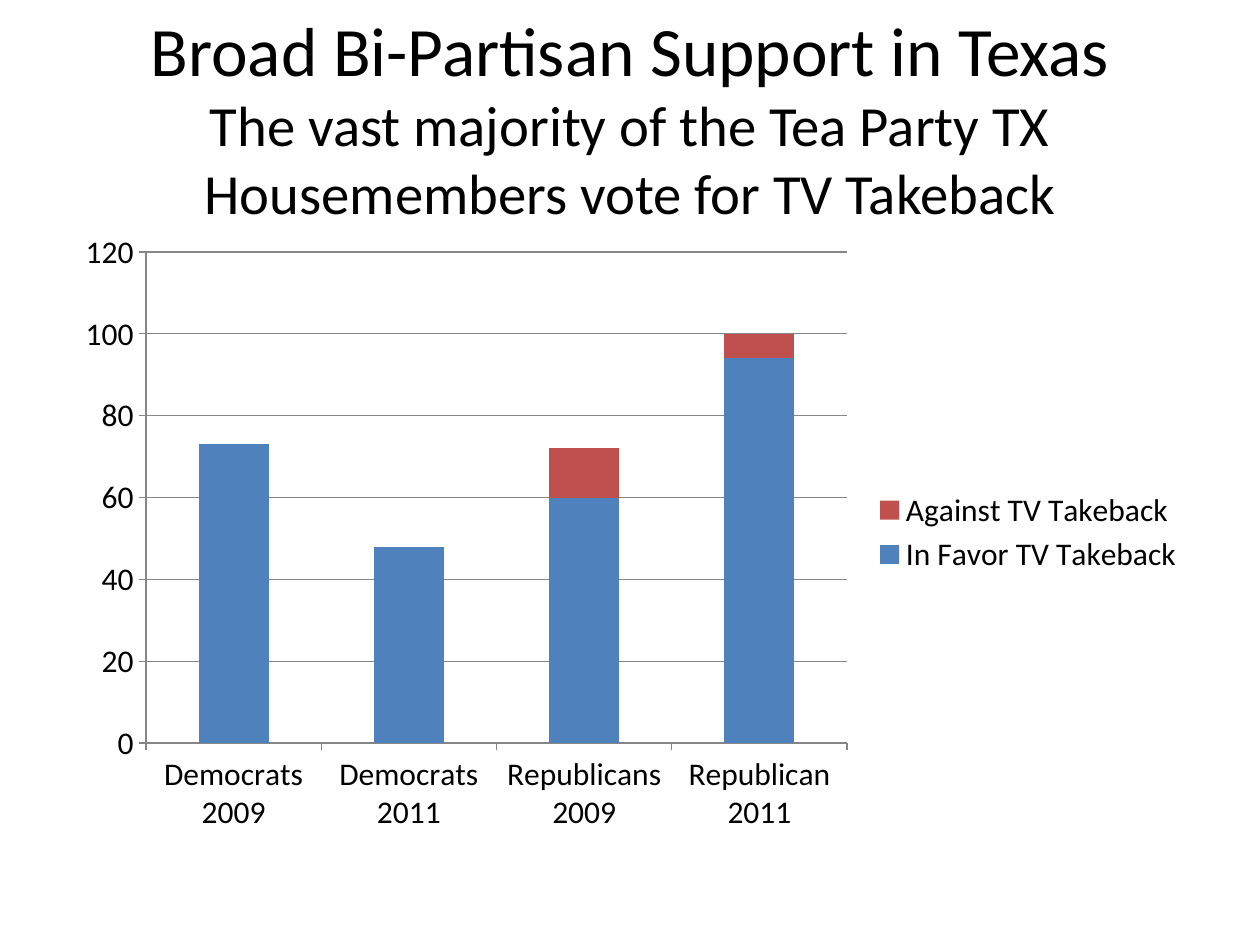
from pptx import Presentation
from pptx.chart.data import CategoryChartData
from pptx.dml.color import RGBColor
from pptx.enum import chart as ch, text
from pptx.util import Pt

FONT = "Calibri"
BLACK, GREY = "000000", "868686"
HEADING = [
    ("Broad Bi-Partisan Support in Texas", 39.6),
    ("The vast majority of the Tea Party TX Housemembers vote for TV Takeback", 32.4),
]
GROUPS = ["Democrats 2009", "Democrats 2011", "Republicans 2009", "Republican 2011"]
VOTES = [
    ("In Favor TV Takeback", (73, 48, 60, 94), "4F81BD"),
    ("Against TV Takeback", (0, 0, 12, 6), "C0504D"),
]
MARGIN, WIDTH = 36, 648


def rgb(value):
    return RGBColor.from_string(value)


def style_font(font, size):
    font.name, font.size = FONT, Pt(size)
    font.color.rgb = rgb(BLACK)


def add_heading(slide):
    box = slide.shapes.add_textbox(Pt(MARGIN), Pt(21.6), Pt(WIDTH), Pt(90))
    frame = box.text_frame
    frame.word_wrap = True
    frame.auto_size = text.MSO_AUTO_SIZE.NONE
    frame.vertical_anchor = text.MSO_ANCHOR.MIDDLE
    paragraph = frame.paragraphs[0]
    paragraph.alignment = text.PP_ALIGN.CENTER
    for i, (words, size) in enumerate(HEADING):
        if i:
            paragraph.add_line_break()
        run = paragraph.add_run()
        run.text = words
        style_font(run.font, size)


def add_vote_chart(slide):
    data = CategoryChartData()
    data.categories = GROUPS
    for name, counts, _ in VOTES:
        data.add_series(name, counts)
    chart = slide.shapes.add_chart(
        ch.XL_CHART_TYPE.COLUMN_STACKED,
        Pt(MARGIN), Pt(126), Pt(WIDTH), Pt(356.4), data).chart
    style_font(chart.font, 18)
    chart.has_title = False
    chart.has_legend = True
    chart.legend.position = ch.XL_LEGEND_POSITION.RIGHT
    chart.legend.include_in_layout = False

    plot = chart.plots[0]
    plot.gap_width, plot.overlap = 150, 100
    plot.vary_by_categories = False
    for series, (_, _, color) in zip(plot.series, VOTES):
        series.format.fill.solid()
        series.format.fill.fore_color.rgb = rgb(color)

    votes_axis = chart.value_axis
    votes_axis.has_major_gridlines = True
    for axis in (chart.category_axis, votes_axis):
        axis.major_tick_mark = ch.XL_TICK_MARK.OUTSIDE
    for part in (chart.category_axis, votes_axis, votes_axis.major_gridlines):
        part.format.line.color.rgb = rgb(GREY)
        part.format.line.width = Pt(0.75)


def main():
    deck = Presentation()
    deck.slide_width, deck.slide_height = Pt(720), Pt(540)
    slide = deck.slides.add_slide(deck.slide_layouts[6])
    add_heading(slide)
    add_vote_chart(slide)
    deck.save("out.pptx")


if __name__ == "__main__":
    main()
